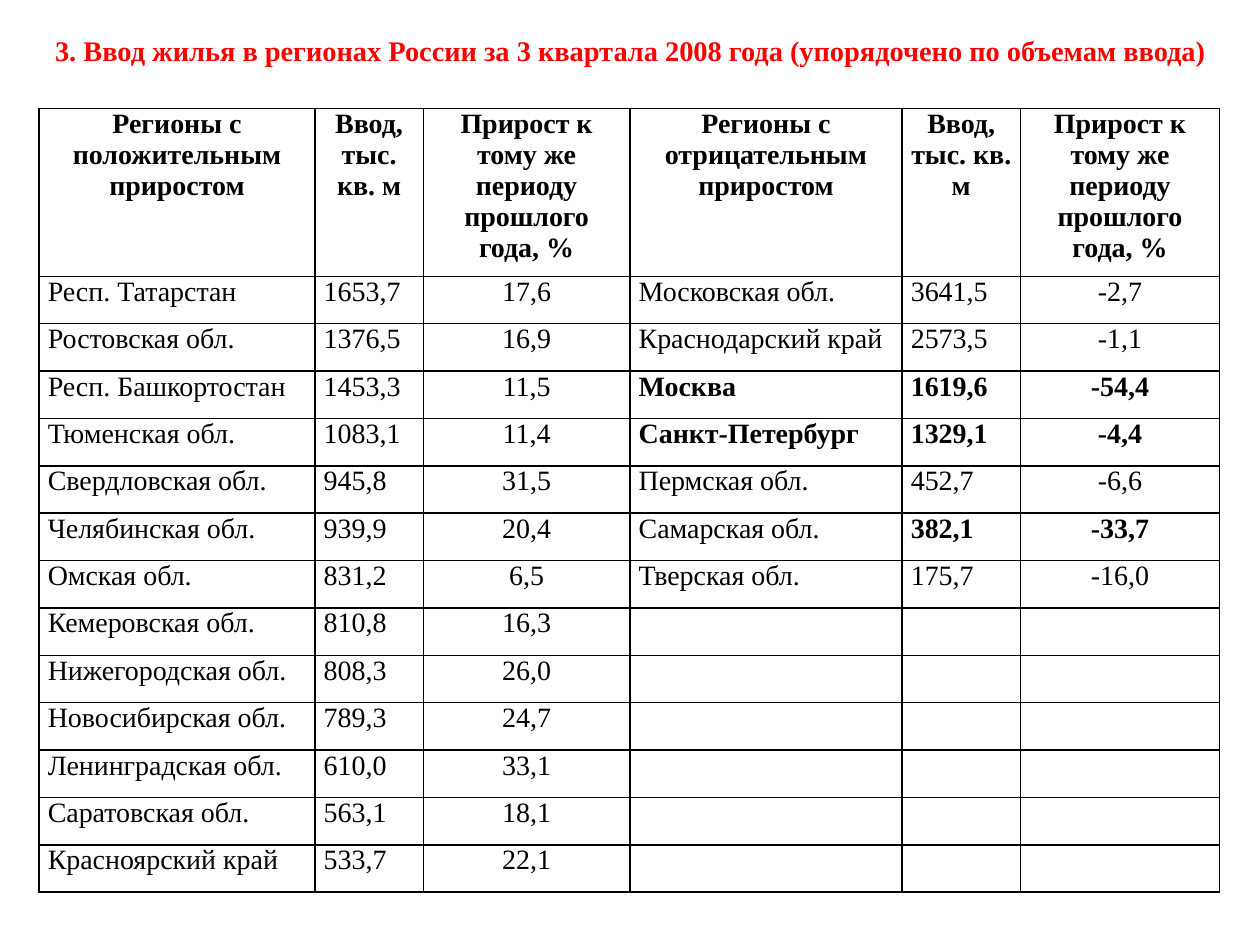
"""Build a slide with a table of housing completions by Russian region."""
from dataclasses import dataclass
from itertools import zip_longest

import pptx
import pptx.dml.color
import pptx.enum.text
import pptx.oxml
import pptx.oxml.ns
import pptx.util
from pptx.util import Inches

ALIGN = pptx.enum.text.PP_ALIGN
FONT = "Times New Roman"
BLACK = "000000"
RED = "FF0000"
TITLE = "3. Ввод жилья в регионах России за 3 квартала 2008 года (упорядочено по объемам ввода)"
HEADERS = (
    "Регионы с положительным приростом",
    "Ввод, тыс. кв. м",
    "Прирост к тому же периоду прошлого года, %",
    "Регионы с отрицательным приростом",
    "Ввод, тыс. кв. м",
    "Прирост к тому же периоду прошлого года, %",
)
COLUMN_WIDTHS = (2.19, 0.86, 1.64, 2.16, 0.94, 1.58)
HEADER_HEIGHT = 1.24
BODY_HEIGHT = 4.89


@dataclass(frozen=True)
class Region:
    name: str
    volume: str
    growth: str
    bold_name: bool = False
    bold_values: bool = False


GROWING = (
    Region("Респ. Татарстан", "1653,7", "17,6"),
    Region("Ростовская обл.", "1376,5", "16,9"),
    Region("Респ. Башкортостан", "1453,3", "11,5"),
    Region("Тюменская обл.", "1083,1", "11,4"),
    Region("Свердловская обл.", "945,8", "31,5"),
    Region("Челябинская обл.", "939,9", "20,4"),
    Region("Омская обл.", "831,2", "6,5"),
    Region("Кемеровская обл.", "810,8", "16,3"),
    Region("Нижегородская обл.", "808,3", "26,0"),
    Region("Новосибирская обл.", "789,3", "24,7"),
    Region("Ленинградская обл.", "610,0", "33,1"),
    Region("Саратовская обл.", "563,1", "18,1"),
    Region("Красноярский край", "533,7", "22,1"),
)
SHRINKING = (
    Region("Московская обл.", "3641,5", "-2,7"),
    Region("Краснодарский край", "2573,5", "-1,1"),
    Region("Москва", "1619,6", "-54,4", True, True),
    Region("Санкт-Петербург", "1329,1", "-4,4", True, True),
    Region("Пермская обл.", "452,7", "-6,6"),
    Region("Самарская обл.", "382,1", "-33,7", bold_values=True),
    Region("Тверская обл.", "175,7", "-16,0"),
)
NO_REGION = Region("", "", "")


def rgb(value: str) -> pptx.dml.color.RGBColor:
    return pptx.dml.color.RGBColor.from_string(value)


def write(frame, text: str, size: float, color: str, bold: bool, align) -> None:
    para = frame.paragraphs[0]
    para.text = text
    para.alignment = align
    para.font.name = FONT
    para.font.size = pptx.util.Pt(size)
    para.font.bold = bold
    para.font.color.rgb = rgb(color)


def add_borders(cell, color: str, points: float) -> None:
    properties = cell._tc.get_or_add_tcPr()
    for index, side in enumerate("LRTB"):
        line = pptx.oxml.parse_xml(
            f'<a:ln{side} {pptx.oxml.ns.nsdecls("a")} w="{pptx.util.Pt(points)}">'
            f'<a:solidFill><a:srgbClr val="{color}"/></a:solidFill></a:ln{side}>'
        )
        properties.insert(index, line)


def fill_cell(cell, text: str, bold: bool, align) -> None:
    cell.margin_left = cell.margin_right = Inches(0.07)
    cell.margin_top = cell.margin_bottom = 0
    cell.fill.background()
    add_borders(cell, BLACK, 1)
    write(cell.text_frame, text, 16, BLACK, bold, align)


def fill_region(table, row: int, first_column: int, region: Region) -> None:
    entries = (
        (region.name, region.bold_name, ALIGN.JUSTIFY),
        (region.volume, region.bold_values, ALIGN.JUSTIFY),
        (region.growth, region.bold_values, ALIGN.CENTER),
    )
    for column, (text, bold, align) in enumerate(entries, first_column):
        fill_cell(table.cell(row, column), text, bold, align)


def add_title(page) -> None:
    box = page.shapes.add_textbox(Inches(0.31), Inches(0.16), Inches(9.38), Inches(0.47))
    frame = box.text_frame
    frame.word_wrap = True
    frame.margin_left = frame.margin_right = Inches(0.05)
    frame.vertical_anchor = pptx.enum.text.MSO_ANCHOR.MIDDLE
    write(frame, TITLE, 16.2, RED, True, ALIGN.CENTER)


def add_region_table(page) -> None:
    table = page.shapes.add_table(
        len(GROWING) + 1, len(HEADERS), Inches(0.31), Inches(0.86),
        Inches(sum(COLUMN_WIDTHS)), Inches(HEADER_HEIGHT + BODY_HEIGHT),
    ).table
    table.first_row = table.horz_banding = False
    for column, width in zip(table.columns, COLUMN_WIDTHS):
        column.width = Inches(width)
    for row in table.rows:
        row.height = Inches(BODY_HEIGHT / len(GROWING))
    table.rows[0].height = Inches(HEADER_HEIGHT)
    for column, header in enumerate(HEADERS):
        fill_cell(table.cell(0, column), header, True, ALIGN.CENTER)
    pairs = zip_longest(GROWING, SHRINKING, fillvalue=NO_REGION)
    for row, (growing, shrinking) in enumerate(pairs, 1):
        fill_region(table, row, 0, growing)
        fill_region(table, row, 3, shrinking)


def main() -> None:
    deck = pptx.Presentation()
    deck.slide_width, deck.slide_height = Inches(10), Inches(7.5)
    page = deck.slides.add_slide(deck.slide_layouts[6])
    add_title(page)
    add_region_table(page)
    deck.save("out.pptx")


if __name__ == "__main__":
    main()
